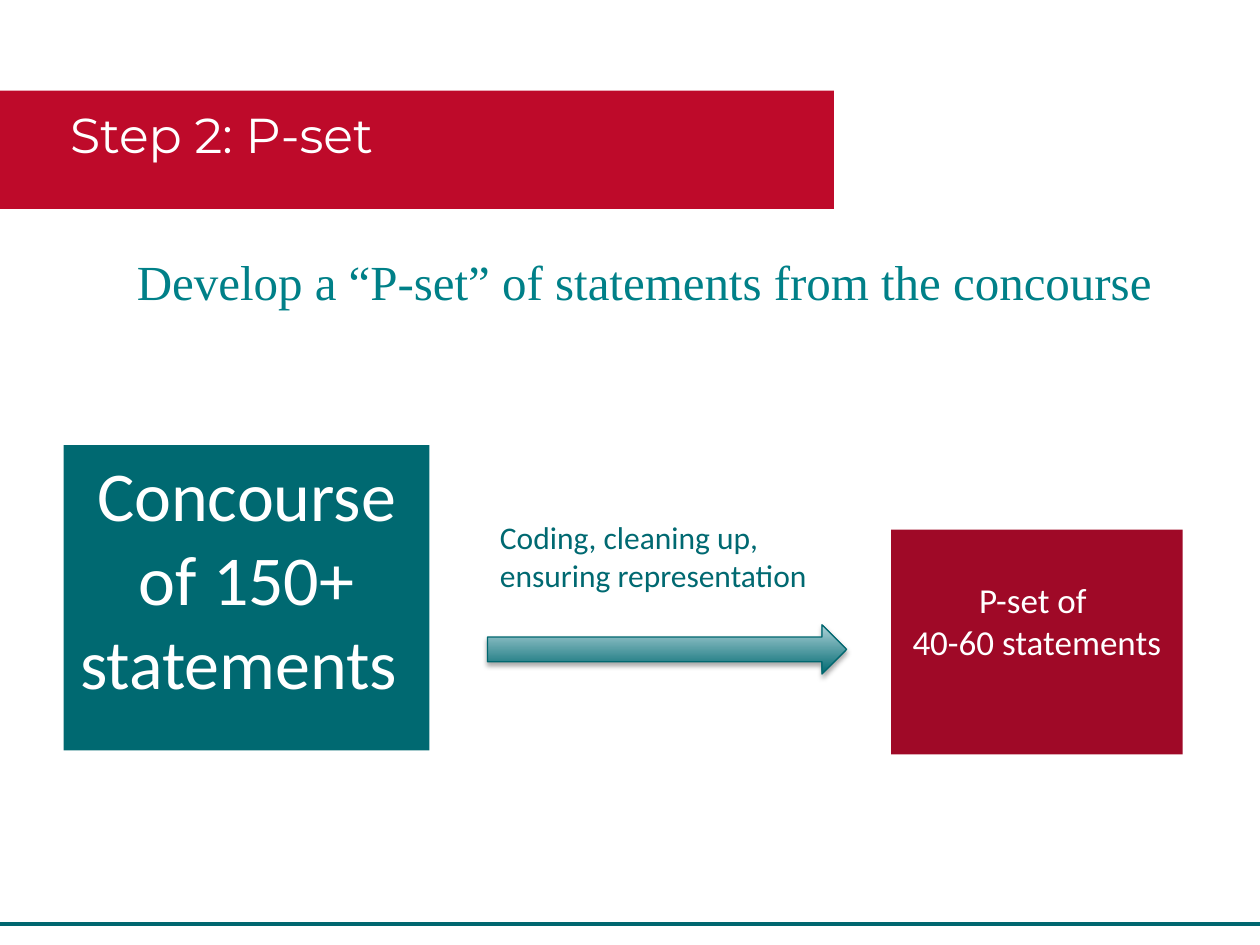
from lxml import etree
from pptx import Presentation
from pptx.dml.color import RGBColor
from pptx.enum.shapes import MSO_CONNECTOR as Line, MSO_SHAPE as Kind
from pptx.enum.text import MSO_ANCHOR as Anchor, PP_ALIGN as Align
from pptx.oxml import parse_xml
from pptx.oxml.ns import nsdecls, qn
from pptx.util import Pt

TEAL, RULE, RED, DARK = "006971", "00676F", "BE0A2A", "9F0927"
WHITE = "FFFFFF"


def color(code):
    return RGBColor.from_string(code)


def write(shape, text, font="Calibri", size=18, ink=WHITE,
          align=Align.LEFT, space=None, top=3.6):
    """Fill a shape with text, one paragraph for each line."""
    frame = shape.text_frame
    frame.word_wrap = True
    frame.vertical_anchor = Anchor.TOP
    frame.margin_top = Pt(top)
    frame.text = text
    for par in frame.paragraphs:
        par.alignment = align
        par.line_spacing = space
        for run in par.runs:
            run.font.name = font
            run.font.size = Pt(size)
            run.font.color.rgb = color(ink)


class Page:
    def __init__(self, slide):
        self.shapes = slide.shapes

    def text(self, x, y, w, h, text, **style):
        box = self.shapes.add_textbox(Pt(x), Pt(y), Pt(w), Pt(h))
        write(box, text, **style)

    def block(self, x, y, w, h, fill, text="", **style):
        box = self.shapes.add_shape(Kind.RECTANGLE, Pt(x), Pt(y), Pt(w), Pt(h))
        box.shadow.inherit = False
        box.fill.solid()
        box.fill.fore_color.rgb = color(fill)
        box.line.fill.background()
        if text:
            write(box, text, align=Align.CENTER, **style)

    def rule(self, y, width, ink, weight):
        line = self.shapes.add_connector(Line.STRAIGHT, 0, Pt(y), Pt(width), Pt(y))
        line.line.color.rgb = color(ink)
        line.line.width = Pt(weight)
        etree.SubElement(line._element.spPr, qn("a:effectLst"))

    def arrow(self, x, y, w, h, low, high, edge):
        """Add a right arrow, shaded upwards from low to high, with a soft shadow."""
        arrow = self.shapes.add_shape(Kind.RIGHT_ARROW, Pt(x), Pt(y), Pt(w), Pt(h))
        arrow.fill.gradient()
        arrow.fill.gradient_angle = 90
        for stop, code in zip(arrow.fill.gradient_stops, (low, high)):
            stop.color.rgb = color(code)
        arrow.line.color.rgb = color(edge)
        arrow.line.width = Pt(0.75)
        arrow._element.spPr.append(parse_xml(
            f'<a:effectLst {nsdecls("a")}>'
            f'<a:outerShdw blurRad="{Pt(3.1)}" dist="{Pt(1.8)}" dir="5400000" rotWithShape="0">'
            '<a:srgbClr val="000000"><a:alpha val="35000"/></a:srgbClr>'
            '</a:outerShdw></a:effectLst>'))


def main():
    deck = Presentation()
    deck.slide_width, deck.slide_height = Pt(720), Pt(540)
    page = Page(deck.slides.add_slide(deck.slide_layouts[6]))

    page.block(0, 51.8, 476.6, 67.7, RED)
    page.text(33, 144, 670.3, 38, "Develop a “P-set” of statements from the concourse",
              font="Times New Roman", size=28, ink="008088",
              align=Align.CENTER, space=0.9)
    page.text(33, 56.2, 440.6, 41, "Step 2: P-set", font="Montserrat", size=28)
    page.rule(527.8, 720, RULE, 2.25)

    page.block(36.4, 254.4, 209, 174.4, TEAL, "Concourse of 150+ statements ", size=40)
    page.block(509.2, 302.7, 166.6, 128.4, DARK, "P-set of \n40-60 statements",
               size=20, top=28)
    page.arrow(278.6, 357, 205.2, 28.2, TEAL, "AED2D8", RULE)
    page.text(278.6, 292.3, 205.2, 51, "Coding, cleaning up, ensuring representation", ink=TEAL)

    deck.save("out.pptx")


if __name__ == "__main__":
    main()
